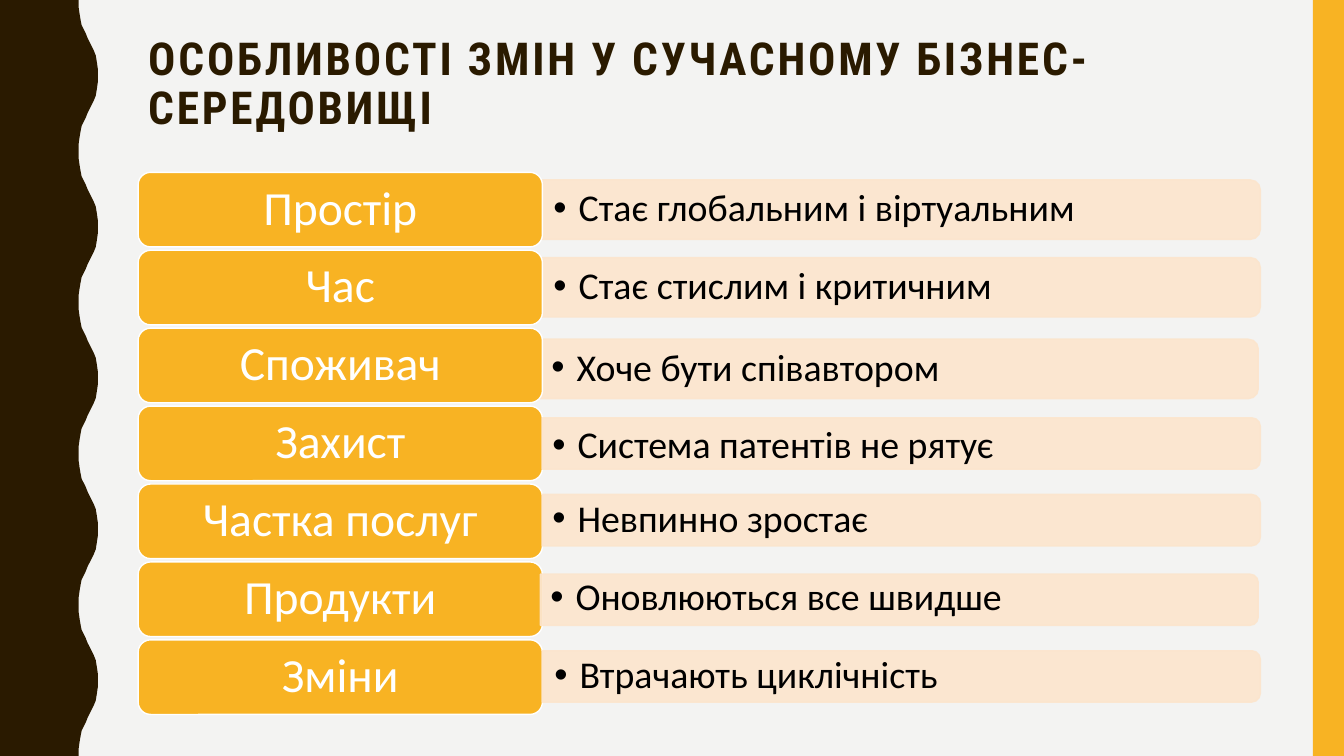
from dataclasses import dataclass

from lxml.etree import SubElement
from pptx import Presentation
from pptx.dml.color import RGBColor
from pptx.enum.shapes import MSO_SHAPE as SHAPE
from pptx.enum.text import MSO_ANCHOR as ANCHOR, PP_ALIGN as ALIGN
from pptx.oxml.ns import qn
from pptx.util import Inches, Pt

BROWN, AMBER, PEACH = "2A1A00", "F8B323", "FCE5CD"
WHITE, BLACK, PAPER = "FFFFFF", "000000", "F3F3F2"

LABEL_LEFT, LABEL_TOP, LABEL_PITCH = 1.37, 1.71, 0.773
LABEL_W, LABEL_H = 4.01, 0.74
BAR_W, TALL, SLIM = 7.12, 0.59, 0.51
TEXT_W, TEXT_H = 7.1, 0.53

WAVE_PERIOD, WAVE_COUNT = 1.5, 5
HALF_WAVE = [
    (0.78, 0), (0.78, 0.07), (0.79, 0.14), (0.8, 0.2), (0.81, 0.25),
    (0.83, 0.29), (0.85, 0.33), (0.87, 0.38), (0.89, 0.42), (0.91, 0.46),
    (0.93, 0.5), (0.95, 0.55), (0.96, 0.61), (0.97, 0.68), (0.97, 0.75),
]


@dataclass
class Row:
    label: str
    detail: str
    bar_x: float
    bar_y: float
    bar_h: float
    text_left: float
    text_y: float
    inset: float


ROWS = [
    Row("Простір", "Стає глобальним і віртуальним", 8.94, 2.08, TALL, 5.38, 2.08, 0.11),
    Row("Час", "Стає стислим і критичним", 8.94, 2.85, TALL, 5.38, 2.85, 0.11),
    Row("Споживач", "Хоче бути співавтором", 8.92, 3.66, TALL, 5.36, 3.66, 0.11),
    Row("Захист", "Система патентів не рятує", 8.94, 4.4, SLIM, 5.38, 4.43, 0.1),
    Row("Частка послуг", "Невпинно зростає", 8.94, 5.16, SLIM, 5.38, 5.16, 0.1),
    Row("Продукти", "Оновлюються все швидше", 8.92, 5.95, SLIM, 5.36, 5.94, 0.1),
    Row("Зміни", "Втрачають циклічність", 8.94, 6.71, SLIM, 5.4, 6.71, 0.1),
]


def rgb(color: str) -> RGBColor:
    return RGBColor.from_string(color)


def paint(sp, fill: str, line: str | None = None, alpha: int = 100) -> None:
    sp.shadow.inherit = False
    sp.fill.solid()
    sp.fill.fore_color.rgb = rgb(fill)
    if line:
        sp.line.color.rgb = rgb(line)
        sp.line.width = Pt(1)
    else:
        sp.line.fill.background()
    if alpha < 100:
        for clr in sp._element.spPr.iter(qn("a:srgbClr")):
            SubElement(clr, qn("a:alpha"), val=str(alpha * 1000))


def write(sp, text: str, *, size: float, color: str, font: str = "Calibri",
          bold: bool = False, align=ALIGN.LEFT, anchor=ANCHOR.MIDDLE,
          inset: tuple[float, float] = (0.1, 0.05), spacing: int = 0,
          bullet: bool = False) -> None:
    tf = sp.text_frame
    tf.word_wrap = True
    tf.vertical_anchor = anchor
    tf.margin_left = tf.margin_right = Inches(inset[0])
    tf.margin_top = tf.margin_bottom = Inches(inset[1])
    p = tf.paragraphs[0]
    p.alignment = align
    p.line_spacing = 0.9
    r = p.add_run()
    r.text = text
    r.font.name = font
    r.font.size = Pt(size)
    r.font.bold = bold
    r.font.color.rgb = rgb(color)
    if spacing:
        r.font._element.set("spc", str(spacing * 100))
    if bullet:
        pPr = p._p.get_or_add_pPr()
        pPr.set("marL", str(Inches(0.25)))
        pPr.set("indent", str(Inches(-0.25)))
        SubElement(pPr, qn("a:buFont"), typeface="Arial")
        SubElement(pPr, qn("a:buChar"), char="•")


def add_wave(slide, height: float) -> None:
    mirrored = [(x, WAVE_PERIOD - y) for x, y in reversed(HALF_WAVE[1:-1])]
    edge = [(x, y + i * WAVE_PERIOD)
            for i in range(WAVE_COUNT) for x, y in HALF_WAVE + mirrored]
    points = edge + [(HALF_WAVE[0][0], height), (0, height)]
    builder = slide.shapes.build_freeform(0, 0)
    builder.add_line_segments([(Inches(x), Inches(y)) for x, y in points])
    paint(builder.convert_to_shape(), BROWN)


def add_label(slide, row: Row, index: int) -> None:
    sp = slide.shapes.add_shape(
        SHAPE.ROUNDED_RECTANGLE, Inches(LABEL_LEFT),
        Inches(LABEL_TOP + index * LABEL_PITCH), Inches(LABEL_W), Inches(LABEL_H))
    paint(sp, AMBER, WHITE)
    write(sp, row.label, size=34, color=WHITE, align=ALIGN.CENTER, inset=(0.14, 0.07))


def add_detail(slide, row: Row) -> None:
    bar = slide.shapes.add_shape(
        SHAPE.ROUND_2_SAME_RECTANGLE, Inches(row.bar_x - row.bar_h / 2),
        Inches(row.bar_y - BAR_W / 2), Inches(row.bar_h), Inches(BAR_W))
    bar.rotation = 90
    paint(bar, PEACH, PEACH, alpha=90)
    box = slide.shapes.add_textbox(
        Inches(row.text_left), Inches(row.text_y - TEXT_H / 2),
        Inches(TEXT_W), Inches(TEXT_H))
    write(box, row.detail, size=27, color=BLACK, inset=(row.inset, 0.05), bullet=True)


def main() -> None:
    prs = Presentation()
    prs.slide_width, prs.slide_height = Inches(13.33), Inches(7.5)
    slide = prs.slides.add_slide(prs.slide_layouts[5])
    slide.background.fill.solid()
    slide.background.fill.fore_color.rgb = rgb(PAPER)

    add_wave(slide, 7.5)
    band = slide.shapes.add_shape(
        SHAPE.RECTANGLE, Inches(13.02), 0, Inches(0.31), Inches(7.5))
    paint(band, AMBER)

    title = slide.shapes.title
    title.left, title.top = Inches(1.37), Inches(0.31)
    title.width, title.height = Inches(11.13), Inches(1.16)
    write(title, "ОСОБЛИВОСТІ ЗМІН У СУЧАСНОМУ БІЗНЕС-СЕРЕДОВИЩІ", size=32.4,
          color=BROWN, font="Roboto Condensed", bold=True, anchor=ANCHOR.TOP, spacing=2)

    for row in ROWS:
        if row.bar_h == TALL:
            add_detail(slide, row)
    for i, row in enumerate(ROWS):
        add_label(slide, row, i)
    for row in ROWS:
        if row.bar_h == SLIM:
            add_detail(slide, row)

    prs.save("out.pptx")


if __name__ == "__main__":
    main()
